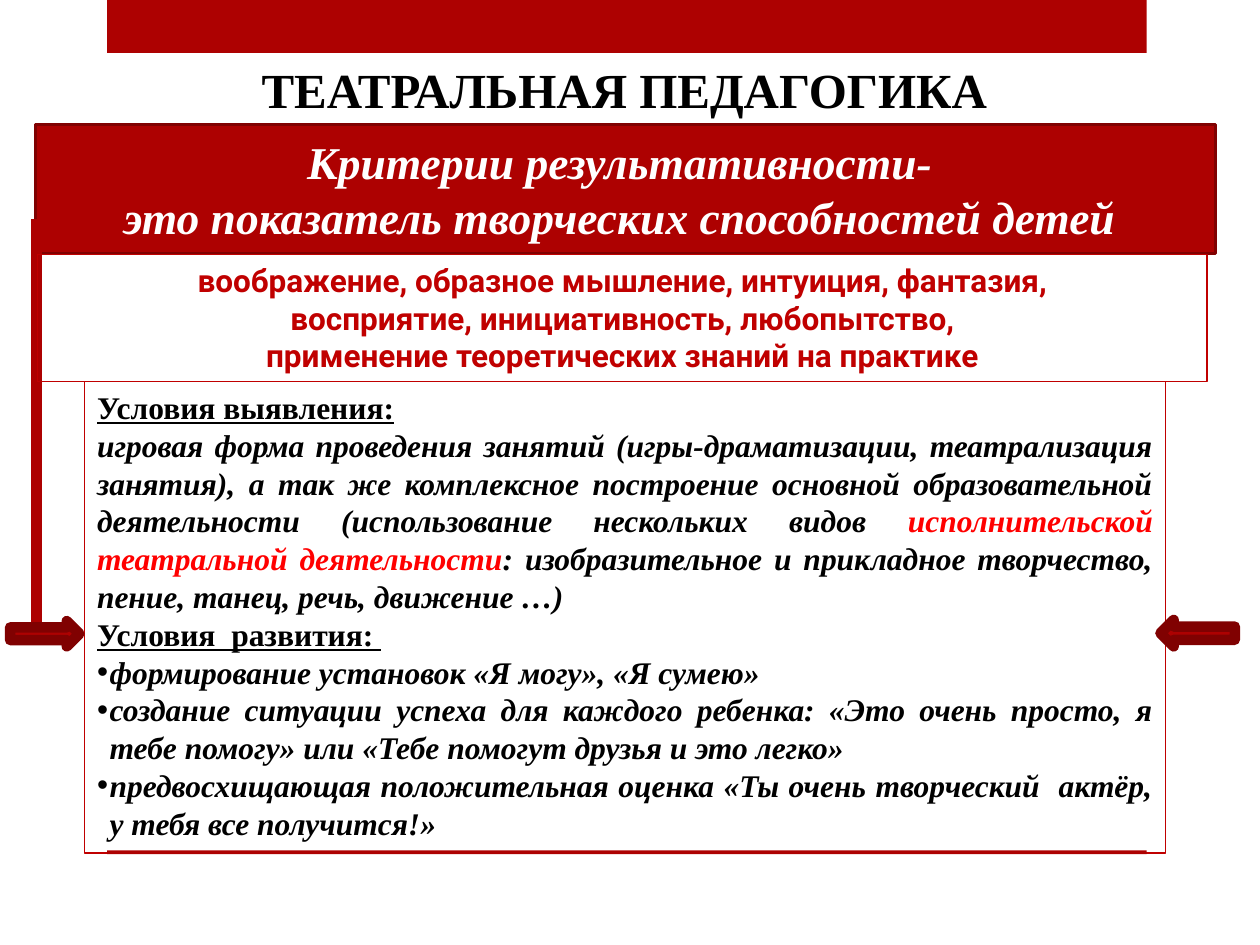
"""Build the slide on criteria and conditions of theatre pedagogy."""
from dataclasses import dataclass

from lxml import etree
from pptx import Presentation
from pptx.dml.color import RGBColor
from pptx.enum.shapes import MSO_CONNECTOR, MSO_SHAPE
from pptx.enum.text import MSO_ANCHOR, MSO_AUTO_SIZE, PP_ALIGN
from pptx.oxml.ns import qn
from pptx.util import Inches, Pt

RECT, ARROW = MSO_SHAPE.RECTANGLE, MSO_SHAPE.RIGHT_ARROW
STRAIGHT = MSO_CONNECTOR.STRAIGHT
TOP, MIDDLE = MSO_ANCHOR.TOP, MSO_ANCHOR.MIDDLE
CENTER, JUSTIFY = PP_ALIGN.CENTER, PP_ALIGN.JUSTIFY


@dataclass(frozen=True)
class Theme:
    red: str = "AD0101"
    dark_red: str = "800101"
    border: str = "C00000"
    accent: str = "FF0000"
    black: str = "000000"
    white: str = "FFFFFF"
    serif: str = "Times New Roman"
    sans: str = "Roboto"
    title: int = 28
    banner: int = 26
    body: int = 18
    leading: float = 1.0
    hanging: float = 0.1


THEME = Theme()
WIDTH, HEIGHT = 10, 7.5
STRIP_LEFT, STRIP_WIDTH = 0.085 * WIDTH, 0.825 * WIDTH

TITLE = ["ТЕАТРАЛЬНАЯ ПЕДАГОГИКА"]
CRITERIA = [
    "Критерии результативности- ",
    "это показатель творческих способностей детей ",
]
ABILITIES = [
    "воображение, образное мышление, интуиция, фантазия,",
    " восприятие, инициативность, любопытство, ",
    "применение теоретических знаний на практике",
]
CONDITIONS = [
    ("heading", ["Условия выявления:"]),
    ("text", [
        "игровая форма проведения занятий (игры-драматизации, театрализация занятия), "
        "а так же комплексное построение основной образовательной деятельности "
        "(использование нескольких видов ",
        "исполнительской театральной деятельности",
        ": изобразительное и прикладное творчество, пение, танец, речь, движение …)",
    ]),
    ("heading", ["Условия  развития: "]),
    ("bullet", ["формирование установок «Я могу», «Я сумею»"]),
    ("bullet", [
        "создание ситуации успеха для каждого ребенка: «Это очень просто, "
        "я тебе помогу» или «Тебе помогут друзья и это легко»",
    ]),
    ("bullet", [
        "предвосхищающая положительная оценка «Ты очень творческий  актёр, "
        "у тебя все получится!»",
    ]),
]


def rgb(color):
    return RGBColor.from_string(color)


def place(part, left, top, width, height):
    part.left, part.top = Inches(left), Inches(top)
    part.width, part.height = Inches(width), Inches(height)


def outline(part, color, weight):
    part.line.color.rgb = rgb(color)
    part.line.width = Pt(weight)


def add_block(slide, kind, box, fill=None, border=None, weight=0):
    block = slide.shapes.add_shape(kind, *map(Inches, box))
    block.shadow.inherit = False
    if fill:
        block.fill.solid()
        block.fill.fore_color.rgb = rgb(fill)
    else:
        block.fill.background()
    if border:
        outline(block, border, weight)
    else:
        block.line.fill.background()
    return block


def style_run(run, size, color, face=THEME.serif, italic=False, underline=False):
    font = run.font
    font.name, font.size, font.bold = face, Pt(size), True
    font.italic, font.underline = italic, underline
    font.color.rgb = rgb(color)


def set_bullet(paragraph, bulleted):
    properties = paragraph._p.get_or_add_pPr()
    indent = Inches(THEME.hanging) if bulleted else 0
    properties.set("marL", str(indent))
    properties.set("indent", str(-indent))
    if bulleted:
        etree.SubElement(properties, qn("a:buFont")).set("typeface", "Arial")
        etree.SubElement(properties, qn("a:buChar")).set("char", "•")
    else:
        etree.SubElement(properties, qn("a:buNone"))


def prepare(frame, anchor):
    frame.word_wrap = True
    frame.auto_size = MSO_AUTO_SIZE.NONE
    frame.vertical_anchor = anchor


def format_paragraph(paragraph, alignment):
    paragraph.alignment = alignment
    paragraph.line_spacing = THEME.leading
    paragraph.space_before = paragraph.space_after = Pt(0)


def write_centered(part, lines, anchor, **font):
    frame = part.text_frame
    prepare(frame, anchor)
    frame.text = "\n".join(lines)
    for paragraph in frame.paragraphs:
        format_paragraph(paragraph, CENTER)
        style_run(paragraph.runs[0], **font)


def write_conditions(part):
    frame = part.text_frame
    prepare(frame, TOP)
    for number, (role, pieces) in enumerate(CONDITIONS):
        paragraph = frame.add_paragraph() if number else frame.paragraphs[0]
        format_paragraph(paragraph, JUSTIFY)
        set_bullet(paragraph, role == "bullet")
        heading = role == "heading"
        for order, piece in enumerate(pieces):
            run = paragraph.add_run()
            run.text = piece
            color = THEME.accent if order == 1 else THEME.black
            style_run(run, THEME.body, color, italic=not heading, underline=heading)


def main():
    deck = Presentation()
    deck.slide_width, deck.slide_height = Inches(WIDTH), Inches(HEIGHT)
    slide = deck.slides.add_slide(deck.slide_layouts[1])
    title, conditions = slide.placeholders

    for top, height in ((0, 0.42), (0.9 * HEIGHT, 0.03)):
        add_block(slide, RECT, (STRIP_LEFT, top, STRIP_WIDTH, height), THEME.red)

    place(title, 0.35, 0.42, 9.21, 0.57)
    write_centered(title, TITLE, TOP, size=THEME.title, color=THEME.black)

    banner = add_block(slide, RECT, (0.28, 0.99, 9.37, 1.02),
                       THEME.red, THEME.dark_red, 1.75)
    write_centered(banner, CRITERIA, MIDDLE, size=THEME.banner,
                   color=THEME.white, italic=True)

    link = slide.shapes.add_connector(
        STRAIGHT, *map(Inches, (0.29, 1.74, 0.29, 5.11)))
    outline(link, THEME.red, 6)
    etree.SubElement(link._element.spPr, qn("a:effectLst"))

    for box, turn in (((0.08, 4.93, 0.55, 0.2), 0), ((9.21, 4.92, 0.59, 0.21), 180)):
        arrow = add_block(slide, ARROW, box, THEME.red, THEME.dark_red, 6)
        arrow.rotation = turn

    abilities = add_block(slide, RECT, (0.3, 2.02, 9.28, 1.01),
                          border=THEME.border, weight=0.75)
    write_centered(abilities, ABILITIES, TOP, size=THEME.body,
                   color=THEME.border, face=THEME.sans)

    place(conditions, 0.67, 3.03, 8.58, 3.74)
    outline(conditions, THEME.border, 0.75)
    write_conditions(conditions)

    deck.save("out.pptx")


if __name__ == "__main__":
    main()
